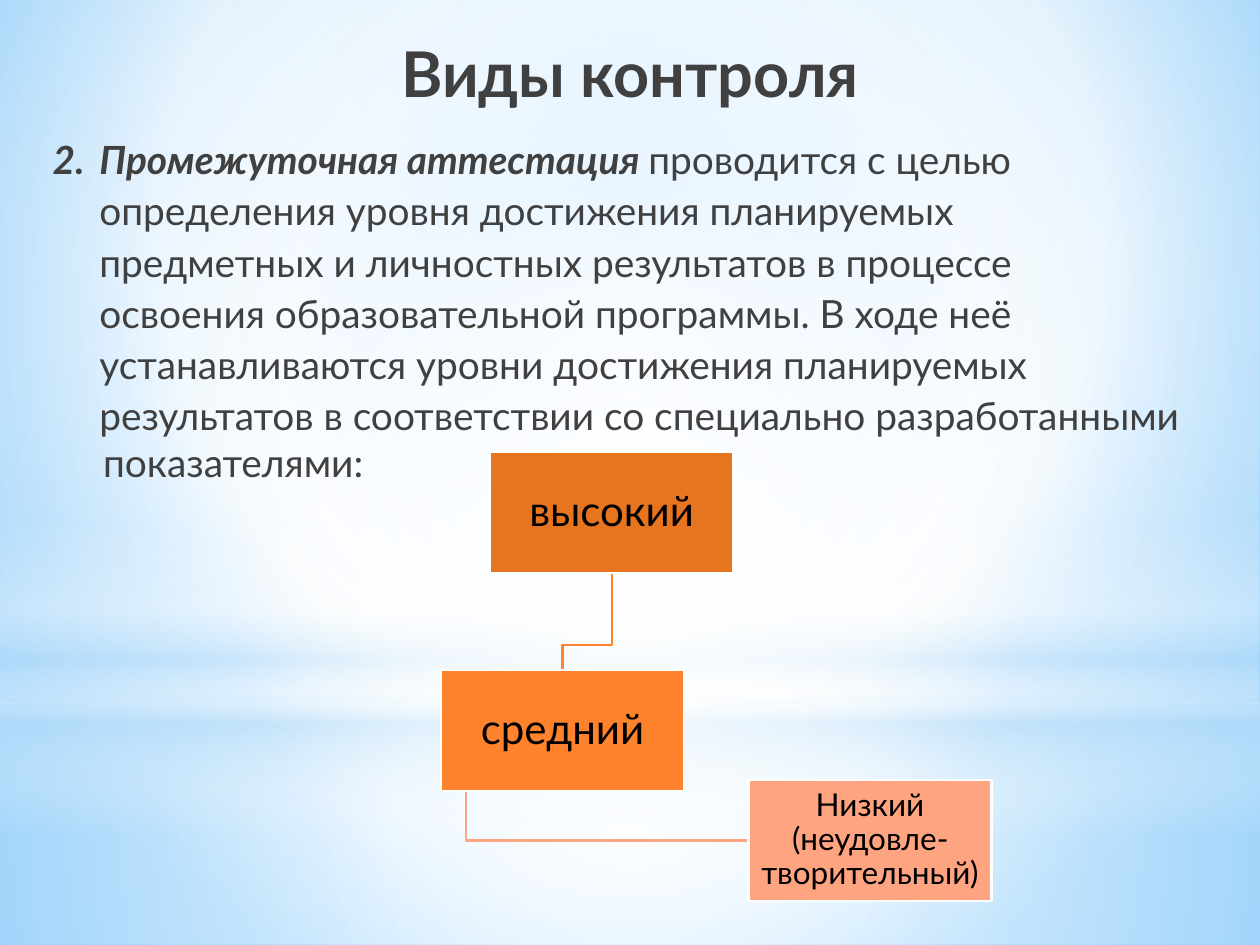
from lxml import etree
from pptx import Presentation
from pptx.dml.color import RGBColor
from pptx.enum.shapes import MSO_SHAPE
from pptx.enum.text import MSO_ANCHOR, MSO_AUTO_SIZE, PP_ALIGN
from pptx.oxml.ns import qn
from pptx.util import Inches, Pt

RECT, OVAL = MSO_SHAPE.RECTANGLE, MSO_SHAPE.OVAL
MIDDLE, TOP = MSO_ANCHOR.MIDDLE, MSO_ANCHOR.TOP
CENTER, LEFT = PP_ALIGN.CENTER, PP_ALIGN.LEFT

SLIDE_W, SLIDE_H = 10, 7.5
HORIZON = 5.58
FONT, GREY, BLACK, WHITE = "Lato", "404040", "000000", "FFFFFF"
BOX_W, BOX_H = 1.93, 0.96
MID = (50, 50, 50, 50)

# Layers of the sky: shape, place, stops (position, colour, opacity), focus
SKY = [
    (RECT, (0, HORIZON, SLIDE_W, SLIDE_H - HORIZON),
     [(0, WHITE, 91), (37, WHITE, 76), (100, "B4DCFA", 79)], MID),
    (RECT, (0, 0, SLIDE_W, HORIZON),
     [(0, WHITE, 89), (48, WHITE, 62), (100, "B4DCFA", 79)], MID),
    (RECT, (0, 4.12, SLIDE_W, 2.5),
     [(0, WHITE, 0), (29, WHITE, 30), (45, "B4DCFA", 40),
      (55, WHITE, 26), (65, "B4DCFA", 60), (100, WHITE, 0)], None),
    (OVAL, (0, 1.75, SLIDE_W, HORIZON), [(0, WHITE, 100), (56, WHITE, 0)], MID),
]

# Levels: text, left, top, fill, size, inset
LEVELS = [
    ("высокий", 3.89, 3.59, "E7741E", 24, 0.02),
    ("средний", 3.5, 5.32, "FF822D", 24, 0.02),
    ("Низкий (неудовле-творительный)", 5.94, 6.19, "FFA481", 18, 0.01),
]

TERM = "Промежуточная аттестация "
DEFINITION = (
    "проводится с целью определения уровня достижения планируемых предметных "
    "и личностных результатов в процессе освоения образовательной программы. "
    "В ходе неё устанавливаются уровни достижения планируемых результатов "
    "в соответствии со специально разработанными")


def color(value):
    return RGBColor.from_string(value)


def place(item, left, top, width, height):
    box = dict(left=left, top=top, width=width, height=height)
    for name, length in box.items():
        setattr(item, name, Inches(length))


def set_gradient(owner, stops, focus=None):
    """Radial gradient around the focus, or top to bottom without one."""
    owner_fill = owner.find(".//" + qn("a:gradFill"))
    for child in list(owner_fill):
        owner_fill.remove(child)
    stop_list = etree.SubElement(owner_fill, qn("a:gsLst"))
    for position, value, opacity in stops:
        stop = etree.SubElement(stop_list, qn("a:gs"), pos=str(position * 1000))
        shade = etree.SubElement(stop, qn("a:srgbClr"), val=value)
        if opacity < 100:
            etree.SubElement(shade, qn("a:alpha"), val=str(opacity * 1000))
    if focus:
        circle = etree.SubElement(owner_fill, qn("a:path"), path="circle")
        sides = {side: str(share * 1000) for side, share in zip("ltrb", focus)}
        etree.SubElement(circle, qn("a:fillToRect"), **sides)
    else:
        etree.SubElement(owner_fill, qn("a:lin"), ang="5400000", scaled="1")


def add_run(paragraph, text, size, value, bold=False, italic=False):
    run = paragraph.add_run()
    run.text = text
    look = dict(name=FONT, size=Pt(size), bold=bold, italic=italic)
    for name, setting in look.items():
        setattr(run.font, name, setting)
    run.font.color.rgb = color(value)


def set_frame(frame, anchor, inset=None):
    look = dict(word_wrap=True, auto_size=MSO_AUTO_SIZE.NONE, vertical_anchor=anchor)
    if inset is not None:
        for side in ("left", "top", "right", "bottom"):
            look["margin_" + side] = Inches(inset)
    for name, setting in look.items():
        setattr(frame, name, setting)


def set_paragraph(paragraph, align, spacing, indent=0, hanging=0):
    look = dict(alignment=align, line_spacing=spacing,
                space_before=Pt(0), space_after=Pt(0))
    for name, setting in look.items():
        setattr(paragraph, name, setting)
    properties = paragraph._p.get_or_add_pPr()
    properties.set("marL", str(Inches(indent)))
    properties.set("indent", str(Inches(-hanging)))
    return properties


def add_sky(slide):
    slide.background.fill.gradient()
    set_gradient(slide.element, [(0, "9ED5FF", 100), (60, WHITE, 100),
                                 (100, "5BB9FF", 100)], (20, 10, 20, 60))
    for kind, area, stops, focus in SKY:
        layer = slide.shapes.add_shape(kind, *map(Inches, area))
        layer.shadow.inherit = False
        layer.line.fill.background()
        layer.fill.gradient()
        set_gradient(layer.element, stops, focus)


def add_definition(slide):
    area = slide.shapes.add_textbox(*map(Inches, (0.32, 0.99, 9.15, 2.99)))
    frame = area.text_frame
    set_frame(frame, TOP)
    numbered = frame.paragraphs[0]
    properties = set_paragraph(numbered, LEFT, 1.1, 0.37, 0.37)
    etree.SubElement(properties, qn("a:buFont"), typeface="+mj-lt")
    etree.SubElement(properties, qn("a:buAutoNum"), type="arabicPeriod", startAt="2")
    add_run(numbered, TERM, 22.2, GREY, bold=True, italic=True)
    add_run(numbered, DEFINITION, 22.2, GREY)
    ending = frame.add_paragraph()
    set_paragraph(ending, LEFT, 1.0, 0.4)
    add_run(ending, "показателями:", 22.2, GREY)


def add_title(slide, text):
    title = slide.shapes.title
    slide.shapes.element.append(title.element)  # in front of the sky
    place(title, 0.5, 0, 9, 1.15)
    set_frame(title.text_frame, MIDDLE)
    heading = title.text_frame.paragraphs[0]
    set_paragraph(heading, CENTER, 1.0)
    add_run(heading, text, 36, GREY, bold=True)


def add_link(slide, points, value):
    start, *rest = [(Inches(x), Inches(y)) for x, y in points]
    builder = slide.shapes.build_freeform(*start)
    builder.add_line_segments(rest, close=False)
    link = builder.convert_to_shape()
    link.shadow.inherit = False
    link.fill.background()
    link.line.color.rgb = color(value)
    link.line.width = Pt(1.25)


def add_level(slide, text, left, top, fill, size, inset):
    level = slide.shapes.add_shape(RECT, *map(Inches, (left, top, BOX_W, BOX_H)))
    level.shadow.inherit = False
    level.fill.solid()
    level.fill.fore_color.rgb = color(fill)
    level.line.color.rgb = color(WHITE)
    level.line.width = Pt(1.25)
    set_frame(level.text_frame, MIDDLE, inset)
    label = level.text_frame.paragraphs[0]
    set_paragraph(label, CENTER, 0.9)
    add_run(label, text, size, BLACK)


def add_hierarchy(slide):
    (_, high_x, high_y, *_), (_, mid_x, mid_y, mid_fill, *_), \
        (_, low_x, low_y, low_fill, *_) = LEVELS
    # Low level hangs from the left part of the middle one
    stem_x, low_center = mid_x + 0.2, low_y + BOX_H / 2
    add_link(slide, [(stem_x, mid_y + BOX_H), (stem_x, low_center),
                     (low_x, low_center)], low_fill)
    # Middle level hangs from the centre of the high one
    high_center, mid_center, bend = high_x + BOX_W / 2, mid_x + BOX_W / 2, mid_y - 0.2
    add_link(slide, [(high_center, high_y + BOX_H), (high_center, bend),
                     (mid_center, bend), (mid_center, mid_y)], mid_fill)
    for level in LEVELS:
        add_level(slide, *level)


def main():
    deck = Presentation()
    deck.slide_width, deck.slide_height = Inches(SLIDE_W), Inches(SLIDE_H)
    slide = deck.slides.add_slide(deck.slide_layouts[5])
    add_sky(slide)
    add_definition(slide)
    add_title(slide, "Виды контроля")
    add_hierarchy(slide)
    deck.save("out.pptx")


if __name__ == "__main__":
    main()
